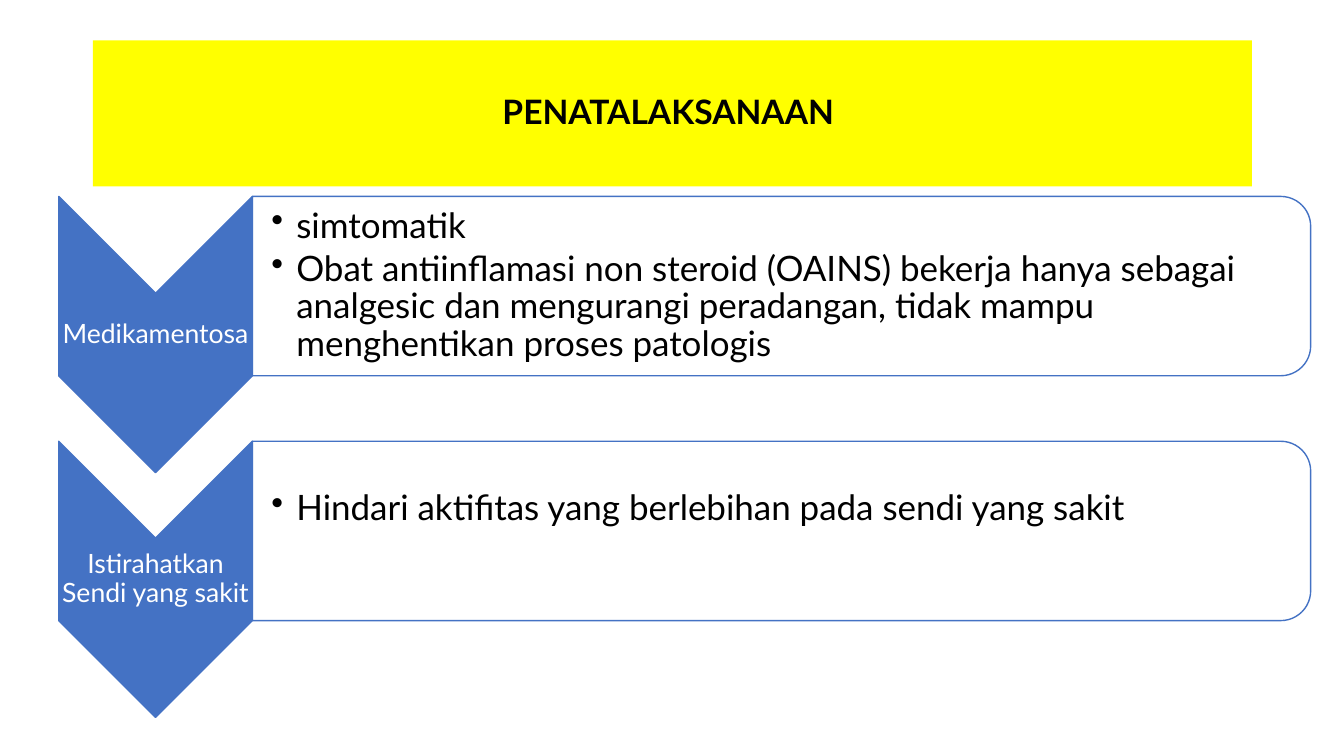
from lxml import etree
from pptx import Presentation
from pptx.dml.color import RGBColor
from pptx.enum.shapes import MSO_SHAPE
from pptx.enum.text import MSO_ANCHOR, PP_ALIGN
from pptx.oxml.ns import qn
from pptx.util import Cm, Pt

RECTANGLE, CHEVRON = MSO_SHAPE.RECTANGLE, MSO_SHAPE.CHEVRON
ROUNDED_TOP = MSO_SHAPE.ROUND_2_SAME_RECTANGLE
CENTER, LEFT, MIDDLE = PP_ALIGN.CENTER, PP_ALIGN.LEFT, MSO_ANCHOR.MIDDLE

FONT = "Lato"
BLUE, YELLOW, WHITE, BLACK = "4472C4", "FFFF00", "FFFFFF", "000000"

# Heading, its points, and the extra space (cm) kept below the points
TITLE = "PENATALAKSANAAN "
STEPS = [
    ("Medikamentosa",
     ["simtomatik",
      "Obat antiinflamasi non steroid (OAINS) bekerja hanya sebagai analgesic dan "
      "mengurangi peradangan, tidak mampu menghentikan proses patologis"], 0),
    ("Istirahatkan Sendi yang sakit",
     ["Hindari aktifitas yang berlebihan pada sendi yang sakit"], 1.09),
]

# Lengths in cm
TITLE_BOX = (2.34, 1.02, 29.21, 3.68)
STEP_LEFT, STEP_TOP, STEP_PITCH = 1.48, 4.95, 6.17
CHEVRON_W, CHEVRON_H = 4.88, 6.96
PANEL_W, PANEL_H = 26.67, 4.52
PANEL_INSET = 0.22
BULLET_INDENT = 0.63


def color(hex_code):
    return RGBColor.from_string(hex_code)


def add_block(kind, left, top, width, height, fill, line=None, alpha=None, turned=False):
    """Draw a shape in the given visible box, turned a quarter clockwise if asked."""
    if turned:
        left, top = left + (width - height) / 2, top + (height - width) / 2
        width, height = height, width
    block = slide.shapes.add_shape(kind, Cm(left), Cm(top), Cm(width), Cm(height))
    block.rotation = 90 if turned else 0
    block.shadow.inherit = False
    block.fill.solid()
    block.fill.fore_color.rgb = color(fill)
    if alpha:
        solid = block.fill._xPr.find(qn("a:solidFill"))
        etree.SubElement(solid[0], qn("a:alpha")).set("val", str(alpha * 1000))
    if line:
        block.line.color.rgb = color(line)
        block.line.width = Pt(1)
    else:
        block.line.fill.background()
    return block


def write(holder, paragraphs, size, ink, align=CENTER, bold=False, after=0,
          bullet=False, insets=(0.25, 0.13, 0.25, 0.13)):
    """Fill a shape with paragraphs; insets are left, top, right, bottom in cm."""
    frame = holder.text_frame
    frame.word_wrap = True
    frame.vertical_anchor = MIDDLE
    (frame.margin_left, frame.margin_top,
     frame.margin_right, frame.margin_bottom) = map(Cm, insets)
    for i, words in enumerate(paragraphs):
        paragraph = frame.paragraphs[0] if i == 0 else frame.add_paragraph()
        paragraph.alignment = align
        paragraph.line_spacing = 0.9
        paragraph.space_after = Pt(after)
        run = paragraph.add_run()
        run.text = words
        run.font.name, run.font.size, run.font.bold = FONT, Pt(size), bold
        run.font.color.rgb = color(ink)
        if bullet:
            properties = paragraph._p.get_or_add_pPr()
            properties.set("marL", str(Cm(BULLET_INDENT)))
            properties.set("indent", str(-Cm(BULLET_INDENT)))
            etree.SubElement(properties, qn("a:buChar")).set("char", "•")


def add_text(left, top, width, height, paragraphs, **style):
    box = slide.shapes.add_textbox(Cm(left), Cm(top), Cm(width), Cm(height))
    write(box, paragraphs, **style)


presentation = Presentation()
presentation.slide_width, presentation.slide_height = Cm(33.87), Cm(19.05)
slide = presentation.slides.add_slide(presentation.slide_layouts[6])

title = add_block(RECTANGLE, *TITLE_BOX, fill=YELLOW)
write(title, [TITLE], size=24, ink=BLACK, bold=True)

panel_left = STEP_LEFT + CHEVRON_W
notch = CHEVRON_W / 2
for row, (heading, points, space_below) in enumerate(STEPS):
    top = STEP_TOP + row * STEP_PITCH
    add_block(CHEVRON, STEP_LEFT, top, CHEVRON_W, CHEVRON_H,
              fill=BLUE, line=BLUE, turned=True)
    add_text(STEP_LEFT, top + notch, CHEVRON_W, CHEVRON_H - 2 * notch, [heading],
             size=19, ink=WHITE, insets=(0.03,) * 4)
    add_block(ROUNDED_TOP, panel_left, top, PANEL_W, PANEL_H,
              fill=WHITE, line=BLUE, alpha=90, turned=True)
    add_text(panel_left, top + PANEL_INSET, PANEL_W - PANEL_INSET,
             PANEL_H - 2 * PANEL_INSET, points, size=25, ink=BLACK, align=LEFT,
             after=3.75, bullet=True, insets=(0.48, 0.05, 0.05, 0.05 + space_below))

presentation.save("out.pptx")
